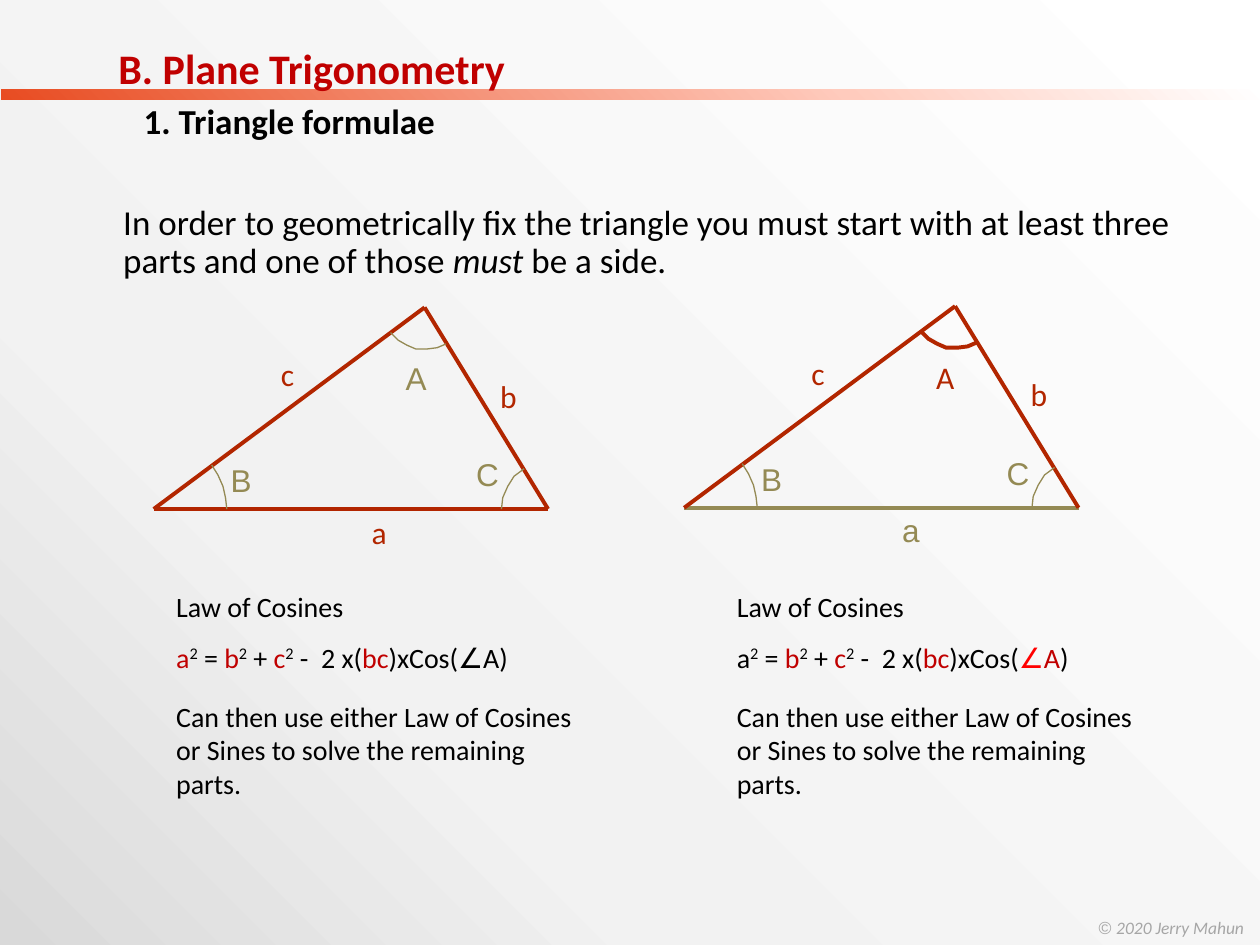
import copy
from dataclasses import dataclass

import pptx
import pptx.dml.color
import pptx.enum.shapes
import pptx.enum.text
import pptx.util
from pptx.util import Inches

BLACK, RED, SIDE_RED, TAN = "000000", "C00000", "B22600", "948A54"
Point = tuple[float, float]


@dataclass
class Run:
    text: str
    color: str = BLACK
    size: float = 16
    font: str = "Calibri"
    bold: bool = False
    italic: bool = False
    raised: bool = False


@dataclass
class Case:
    known: str          # parts of the triangle that are given
    dx: float           # shift of the triangle
    dy: float
    text_left: float
    angle: list[Run]    # angle term of the formula


# Triangle geometry, in inches, for the left-hand case
CORNERS: dict[str, Point] = {"A": (3.37, 2.44), "B": (1.22, 4.04), "C": (4.35, 4.04)}
SIDES = {"a": "BC", "c": "BA", "b": "AC"}
ARCS: dict[str, list[Point]] = {
    "A": [(3.1, 2.64), (3.16, 2.7), (3.23, 2.74), (3.3, 2.77), (3.39, 2.77), (3.47, 2.76), (3.54, 2.73)],
    "B": [(1.8, 4.04), (1.79, 3.95), (1.77, 3.86), (1.73, 3.77), (1.68, 3.69)],
    "C": [(4.16, 3.72), (4.08, 3.78), (4.03, 3.86), (3.99, 3.95), (3.98, 4.04)],
}
LABELS: dict[str, tuple[float, float, float]] = {  # left, top, width
    "a": (2.95, 4.07, 0.11), "b": (3.97, 2.99, 0.11), "c": (2.23, 2.82, 0.1),
    "A": (3.22, 2.85, 0.13), "B": (1.83, 3.66, 0.13), "C": (3.78, 3.61, 0.14),
}
CASES = [
    Case("abc", 0, 0, 1.3, [Run("∠A")]),
    Case("bcA", 4.21, -0.01, 5.75, [Run("∠", "FF0000"), Run("A", RED)]),
]


def rgb(color: str) -> pptx.dml.color.RGBColor:
    return pptx.dml.color.RGBColor.from_string(color)


def set_gradient(fill, stops: list[tuple[float, str]]) -> None:
    """Three-stop gradient running from top right to bottom left."""
    fill.gradient()
    fill.gradient_angle = 225
    first = fill.gradient_stops[0]._gs
    first.addnext(copy.deepcopy(first))
    for stop, (position, color) in zip(fill.gradient_stops, stops):
        stop.position = position
        stop.color.rgb = rgb(color)


def add_runs(paragraph, runs: list[Run]) -> None:
    for part in runs:
        run = paragraph.add_run()
        run.text = part.text
        font = run.font
        font.name, font.size = part.font, pptx.util.Pt(part.size)
        font.bold, font.italic = part.bold, part.italic
        font.color.rgb = rgb(part.color)
        if part.raised:
            run._r.get_or_add_rPr().set("baseline", "30000")


def add_text(slide, box: tuple[float, float, float, float], paragraphs: list[list[Run]],
             wrap: bool = True, spacing: float = 1.0, inset: bool = True) -> None:
    frame = slide.shapes.add_textbox(*map(Inches, box)).text_frame
    frame.word_wrap = wrap
    frame.auto_size = pptx.enum.text.MSO_AUTO_SIZE.SHAPE_TO_FIT_TEXT
    if not inset:
        frame.margin_left = frame.margin_right = frame.margin_top = frame.margin_bottom = 0
    for index, runs in enumerate(paragraphs):
        paragraph = frame.add_paragraph() if index else frame.paragraphs[0]
        paragraph.line_spacing = spacing
        add_runs(paragraph, runs)


def style_line(line, known: bool) -> None:
    line.color.rgb = rgb(SIDE_RED if known else TAN)
    line.width = pptx.util.Pt(2.25 if known else 0)


def add_triangle(slide, case: Case) -> None:
    def place(point: Point) -> Point:
        return Inches(point[0] + case.dx), Inches(point[1] + case.dy)

    for side, (start, end) in SIDES.items():
        edge = slide.shapes.add_connector(
            pptx.enum.shapes.MSO_CONNECTOR.STRAIGHT, *place(CORNERS[start]), *place(CORNERS[end]))
        edge._element.spPr.append(pptx.oxml.parse_xml(
            '<a:effectLst xmlns:a="http://schemas.openxmlformats.org/drawingml/2006/main"/>'))
        style_line(edge.line, side in case.known)

    for angle, points in ARCS.items():
        start, *rest = map(place, points)
        builder = slide.shapes.build_freeform(*start)
        builder.add_line_segments(rest, close=False)
        arc = builder.convert_to_shape()
        arc.shadow.inherit = False
        arc.fill.background()
        style_line(arc.line, angle in case.known)

    for name, (left, top, width) in LABELS.items():
        known = name in case.known
        label = Run(name, SIDE_RED if known else TAN, 18, "Calibri" if known else "Arial")
        add_text(slide, (left + case.dx, top + case.dy, width, 0.24), [[label]], wrap=False, inset=False)


def add_solution(slide, case: Case) -> None:
    square = Run("2", raised=True)
    formula = [
        Run("a", RED if "a" in case.known else BLACK), square, Run(" = "),
        Run("b", RED), square, Run(" + "), Run("c", RED), square,
        Run(" -  2 x("), Run("bc", RED), Run(")xCos("), *case.angle, Run(")"),
    ]
    add_text(slide, (case.text_left, 4.5, 3.23, 0.91), [[Run("Law of Cosines")], formula],
             wrap=False, spacing=1.5)
    add_text(slide, (case.text_left, 5.5, 3.44, 0.91),
             [[Run("Can then use either Law of Cosines or Sines to solve the remaining parts.")]])


def add_heading(slide) -> None:
    heading = slide.shapes.title
    slide.shapes._spTree.append(heading._element)  # in front of the bar
    heading.left, heading.top, heading.width, heading.height = map(Inches, (0.84, 0.29, 4.81, 1.18))
    frame = heading.text_frame
    frame.word_wrap = True
    frame.auto_size = pptx.enum.text.MSO_AUTO_SIZE.NONE
    frame.vertical_anchor = pptx.enum.text.MSO_ANCHOR.TOP
    chapter, section = frame.paragraphs[0], frame.add_paragraph()
    for paragraph, before in ((chapter, 7.5), (section, 3.8)):
        paragraph.alignment = pptx.enum.text.PP_ALIGN.LEFT
        paragraph.space_before = pptx.util.Pt(before)
    section._p.get_or_add_pPr().set("marL", str(Inches(0.2)))
    add_runs(chapter, [Run("B. Plane Trigonometry", RED, 24, bold=True)])
    add_runs(section, [Run("1. Triangle formulae", BLACK, 20, bold=True)])


def main() -> None:
    deck = pptx.Presentation()
    deck.slide_width, deck.slide_height = Inches(10), Inches(7.5)
    slide = deck.slides.add_slide(deck.slide_layouts[5])

    # Background, copyright line and bar
    set_gradient(slide.background.fill, [(0, "FFFFFF"), (0.7, "F2F2F2"), (1, "D9D9D9")])
    add_text(slide, (8.62, 7.23, 1.38, 0.27),
             [[Run("© ", "A6A6A6", 10, "Arial"), Run("2020 Jerry Mahun", "A6A6A6", 10, italic=True)]],
             wrap=False)
    bar = slide.shapes.add_shape(pptx.enum.shapes.MSO_SHAPE.RECTANGLE,
                                 *map(Inches, (0.01, 0.71, 10, 0.08)))
    bar.shadow.inherit = False
    bar.line.fill.background()
    set_gradient(bar.fill, [(0, "FFFFFF"), (0.33, "FFCBBD"), (1, "E84C22")])

    # Heading and statement
    add_heading(slide)
    add_text(slide, (0.88, 1.58, 8.93, 0.7), [[
        Run("In order to geometrically fix the triangle you must start with at least three parts"
            " and one of those ", size=20),
        Run("must", size=20, italic=True), Run(" be a side.", size=20)]], spacing=0.9)

    # The two cases
    for case in CASES:
        add_triangle(slide, case)
        add_solution(slide, case)

    deck.save("out.pptx")


if __name__ == "__main__":
    main()
